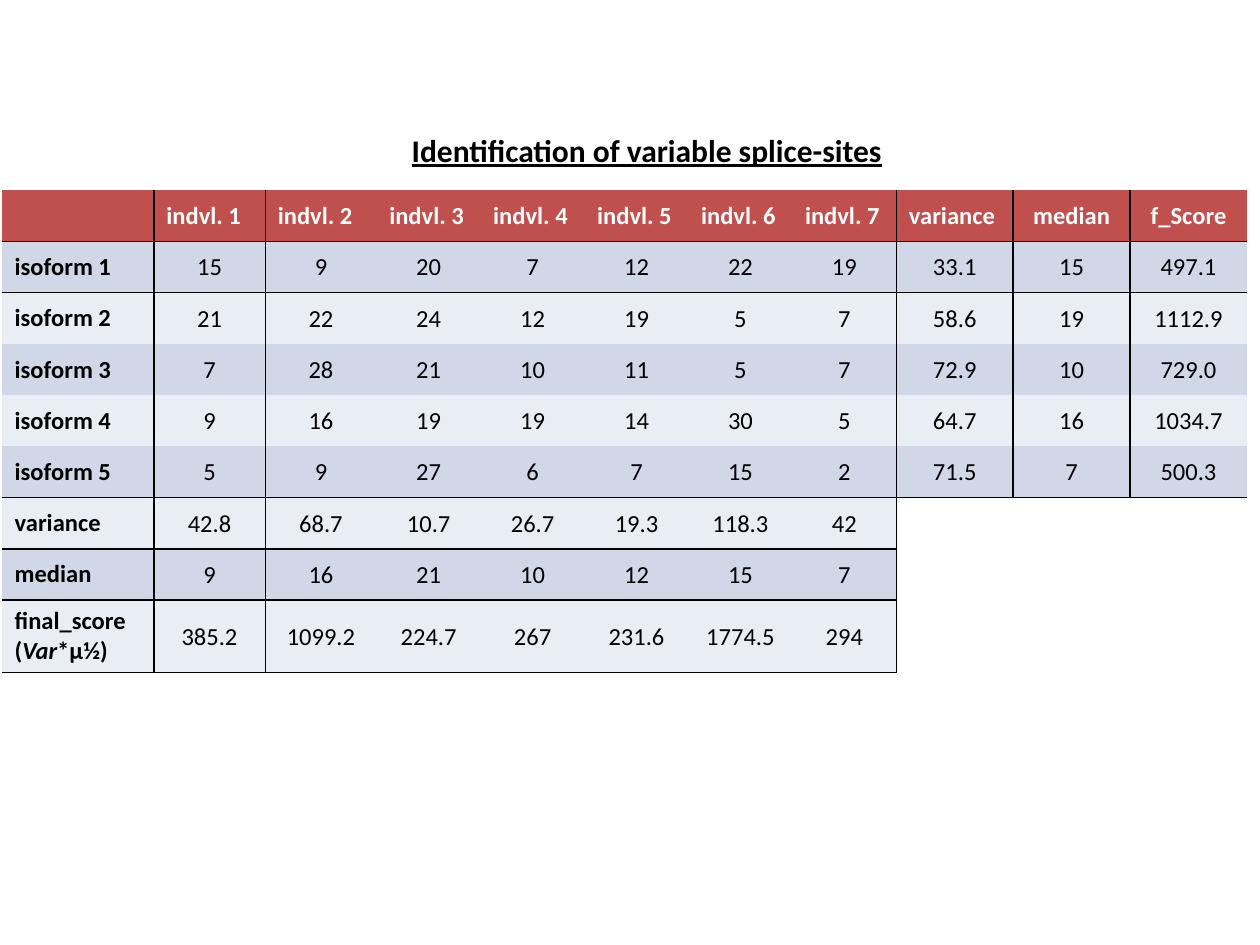
from dataclasses import dataclass

from lxml import etree
from pptx import Presentation
from pptx.dml.color import RGBColor
from pptx.enum.text import MSO_ANCHOR, MSO_AUTO_SIZE, PP_ALIGN
from pptx.oxml.ns import qn
from pptx.util import Pt

LEFT, CENTER = PP_ALIGN.LEFT, PP_ALIGN.CENTER
MIDDLE = MSO_ANCHOR.MIDDLE
NO_WRAP_FIT = MSO_AUTO_SIZE.SHAPE_TO_FIT_TEXT


@dataclass(frozen=True)
class Theme:
    font: str = "Calibri"
    title_size: float = 18
    table_size: float = 14
    ink: str = "000000"
    header_ink: str = "FFFFFF"
    header_fill: str = "C0504D"
    odd_fill: str = "D0D8E8"
    even_fill: str = "E9EDF4"
    rule_width: float = 1


THEME = Theme()

HEADER = ["", *[f"indvl. {n}" for n in range(1, 8)], "variance", "median", "f_Score"]
BODY = [
    ["isoform 1", "15", "9", "20", "7", "12", "22", "19", "33.1", "15", "497.1"],
    ["isoform 2", "21", "22", "24", "12", "19", "5", "7", "58.6", "19", "1112.9"],
    ["isoform 3", "7", "28", "21", "10", "11", "5", "7", "72.9", "10", "729.0"],
    ["isoform 4", "9", "16", "19", "19", "14", "30", "5", "64.7", "16", "1034.7"],
    ["isoform 5", "5", "9", "27", "6", "7", "15", "2", "71.5", "7", "500.3"],
    ["variance", "42.8", "68.7", "10.7", "26.7", "19.3", "118.3", "42"],
    ["median", "9", "16", "21", "10", "12", "15", "7"],
    ["final_score", "385.2", "1099.2", "224.7", "267", "231.6", "1774.5", "294"],
]
ROWS = [HEADER, *BODY]
FORMULA = [("(", False), ("Var", True), ("*µ½)", False)]

COLUMN_WIDTHS = [86.7] + [63.7] * 2 + [59.4] * 5 + [66.8] * 3
ROW_HEIGHT = 29.3
RULES_AFTER_COLUMN = {0, 1, 7, 8, 9}
RULES_BELOW_ROW = {0, 1, 5, 6, 7, 8}


def add_span(para, text, size, color, bold=False, italic=False, underline=False):
    span = para.add_run()
    span.text = text
    font = span.font
    font.name, font.size = THEME.font, Pt(size)
    font.bold, font.italic, font.underline = bold, italic, underline
    font.color.rgb = RGBColor.from_string(color)


def is_filled(row, column):
    return 0 <= row < len(ROWS) and 0 <= column < len(ROWS[row])


def ruled_sides(row, column):
    here = is_filled(row, column)
    return {
        "L": column - 1 in RULES_AFTER_COLUMN and is_filled(row, column - 1),
        "R": column in RULES_AFTER_COLUMN and here,
        "T": row - 1 in RULES_BELOW_ROW and is_filled(row - 1, column),
        "B": row in RULES_BELOW_ROW and here,
    }


def set_borders(cell, sides):
    properties = cell._tc.get_or_add_tcPr()
    for side, ruled in sides.items():
        width = Pt(THEME.rule_width) if ruled else 0
        line = etree.SubElement(properties, qn(f"a:ln{side}"), w=str(width))
        if ruled:
            fill = etree.SubElement(line, qn("a:solidFill"))
            etree.SubElement(fill, qn("a:srgbClr"), val=THEME.ink)
        else:
            etree.SubElement(line, qn("a:noFill"))


def set_fill(cell, row, column):
    if not is_filled(row, column):
        cell.fill.background()
        return
    band = THEME.odd_fill if row % 2 else THEME.even_fill
    cell.fill.solid()
    cell.fill.fore_color.rgb = RGBColor.from_string(band if row else THEME.header_fill)


def write_cell(cell, row, column):
    is_header, is_label = row == 0, column == 0
    cell.vertical_anchor = MIDDLE
    if not is_header and not is_label:
        cell.margin_left = cell.margin_right = cell.margin_top = Pt(0.5)
        cell.margin_bottom = Pt(0)
    para = cell.text_frame.paragraphs[0]
    left_aligned = is_label or (is_header and column < 9)
    para.alignment = LEFT if left_aligned else CENTER
    color = THEME.header_ink if is_header else THEME.ink
    add_span(para, ROWS[row][column], THEME.table_size, color, is_header or is_label)


def add_formula(cell):
    para = cell.text_frame.add_paragraph()
    for text, italic in FORMULA:
        add_span(para, text, THEME.table_size, THEME.ink, bold=True, italic=italic)


def add_score_table(page):
    frame = page.shapes.add_table(
        len(ROWS), len(HEADER), Pt(1.2), Pt(108.7),
        Pt(sum(COLUMN_WIDTHS)), Pt(ROW_HEIGHT * len(ROWS)),
    )
    table = frame.table
    for column, width in zip(table.columns, COLUMN_WIDTHS):
        column.width = Pt(width)
    for table_row in table.rows:
        table_row.height = Pt(ROW_HEIGHT)
    for row in range(len(ROWS)):
        for column in range(len(HEADER)):
            cell = table.cell(row, column)
            set_borders(cell, ruled_sides(row, column))
            set_fill(cell, row, column)
            if is_filled(row, column) and ROWS[row][column]:
                write_cell(cell, row, column)
    add_formula(table.cell(len(ROWS) - 1, 0))


def add_title(page):
    box = page.shapes.add_textbox(Pt(228.2), Pt(71.3), Pt(285), Pt(29))
    box.text_frame.word_wrap = False
    box.text_frame.auto_size = NO_WRAP_FIT
    add_span(
        box.text_frame.paragraphs[0], "Identification of variable splice-sites",
        THEME.title_size, THEME.ink, bold=True, underline=True,
    )


def main():
    deck = Presentation()
    deck.slide_width, deck.slide_height = Pt(720), Pt(540)
    page = deck.slides.add_slide(deck.slide_layouts[6])
    add_score_table(page)
    add_title(page)
    deck.save("out.pptx")


if __name__ == "__main__":
    main()
